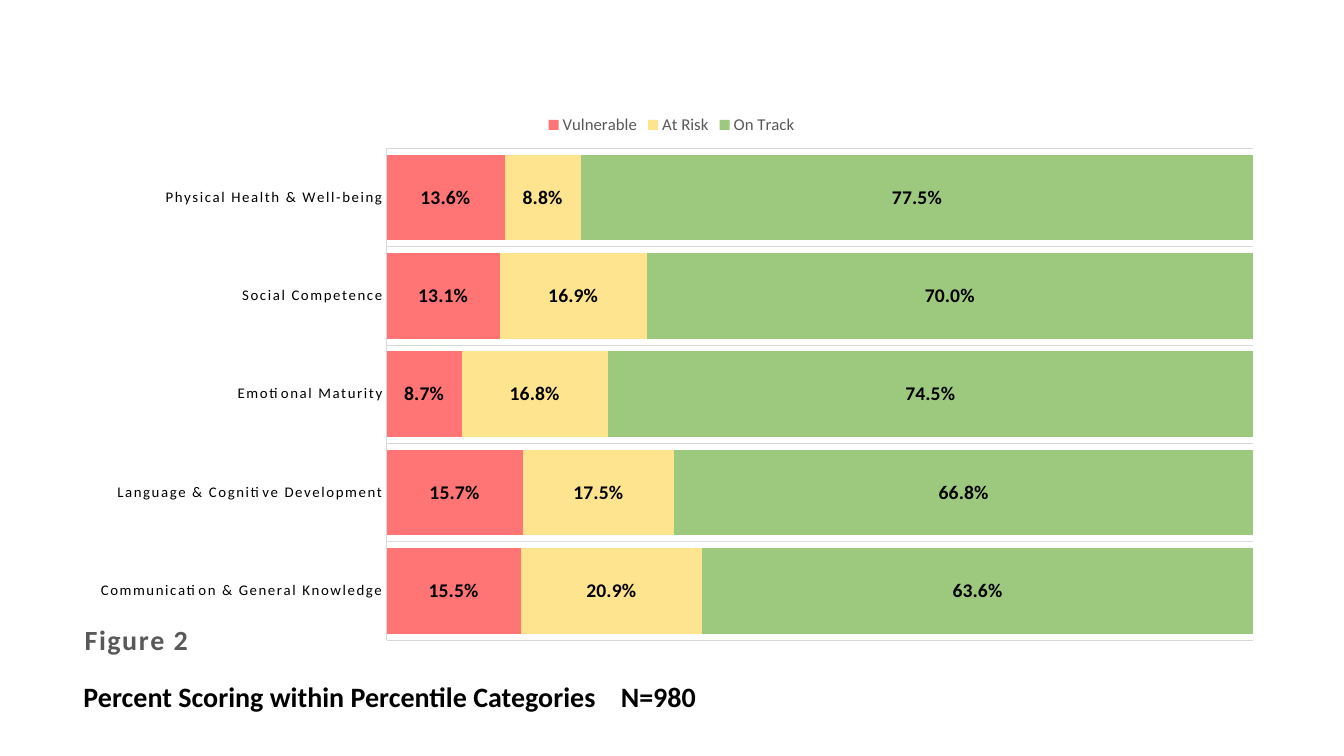
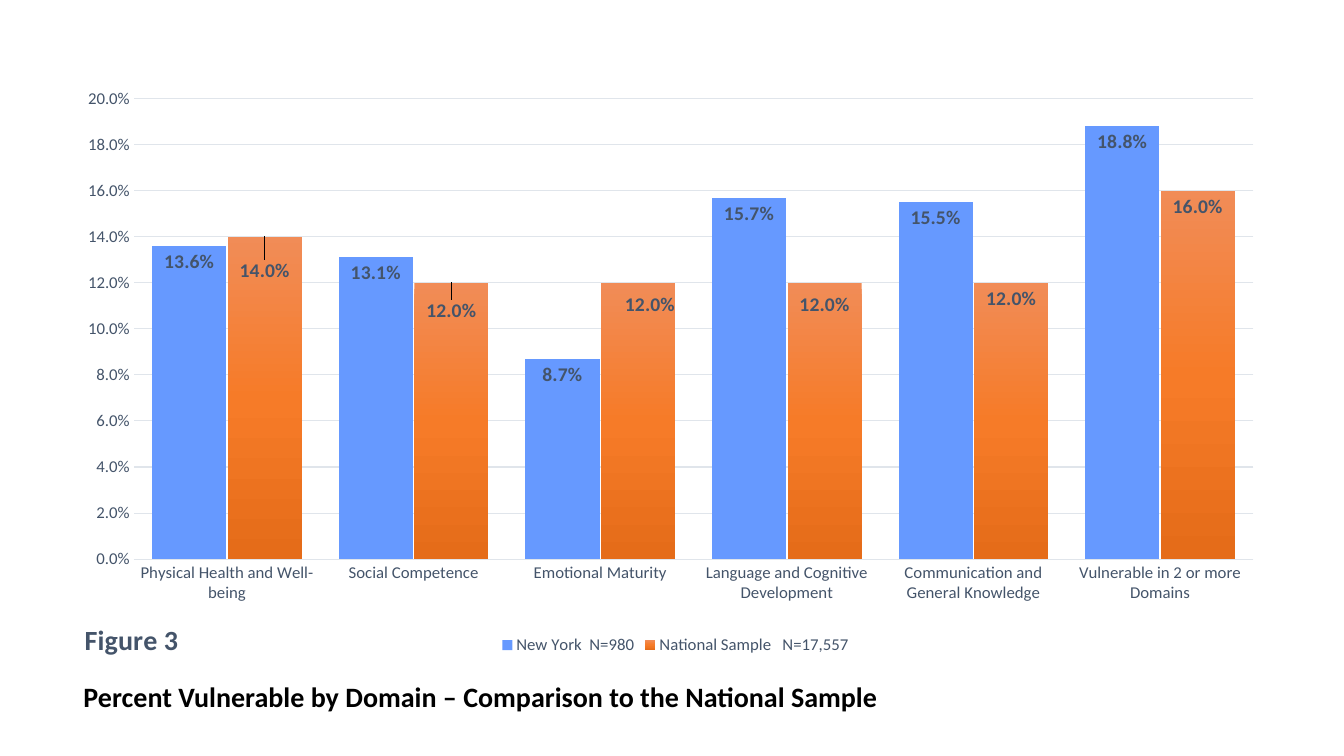
"""Build two chart slides on child development domains."""
from copy import deepcopy

from pptx import Presentation
from pptx.chart.data import CategoryChartData
from pptx.dml.color import RGBColor
from pptx.enum.chart import XL_CHART_TYPE, XL_LABEL_POSITION, XL_LEGEND_POSITION, XL_TICK_MARK
from pptx.enum.text import MSO_ANCHOR
from pptx.oxml import parse_xml
from pptx.oxml.ns import nsdecls, qn
from pptx.util import Inches, Pt

STACKED, CLUSTERED = XL_CHART_TYPE.BAR_STACKED_100, XL_CHART_TYPE.COLUMN_CLUSTERED
CENTER, INSIDE_END = XL_LABEL_POSITION.CENTER, XL_LABEL_POSITION.INSIDE_END
TOP, BOTTOM = XL_LEGEND_POSITION.TOP, XL_LEGEND_POSITION.BOTTOM
NO_TICK = XL_TICK_MARK.NONE
MIDDLE = MSO_ANCHOR.MIDDLE

FONT = "Calibri"
PERCENT = "0.0%"
COLORS = {
    "black": "000000", "gray": "595959", "slate": "44546A",
    "gray_line": "D9D9D9", "slate_line": "E0E5EB",
    "vulnerable": "FF7575", "at_risk": "FFE48F", "on_track": "9CC97D",
    "new_york": "6699FF",
    "national_top": "F18C57", "national_mid": "F67B28", "national_base": "E56C19",
}
NATIONAL_STOPS = [(0, "national_top"), (0.5, "national_mid"), (1, "national_base")]
LEFT, WIDTH = Inches(0.73), Inches(11.94)

FIGURES = [
    {
        "heading": "Percent Scoring within Percentile Categories\u00a0\u00a0\u00a0 N=980".replace("\u00a0", " "),
        "label": "Figure 2", "type": STACKED, "gap": 15, "overlap": 100,
        "categories": ["Communication & General Knowledge", "Language & Cognitive Development",
                       "Emotional Maturity", "Social Competence", "Physical Health & Well-being"],
        "series": [
            ("Vulnerable", [0.155, 0.157, 0.087, 0.131, 0.136], "vulnerable"),
            ("At Risk", [0.209, 0.175, 0.168, 0.169, 0.088], "at_risk"),
            ("On Track", [0.636, 0.668, 0.745, 0.7, 0.775], "on_track"),
        ],
        "text": "gray", "line": "gray_line", "axis_text": "black", "axis_size": 10.6,
        "value_text": "black", "value_position": CENTER, "legend": TOP,
        "plot": (0.26, 0.18, 0.72, 0.79), "legend_at": (0.39, 0.12),
        "label_spacing": "100", "axis_spacing": "120", "scale": (1, 0.1), "nudges": [],
    },
    {
        "heading": "Percent Vulnerable by Domain – Comparison to the National Sample",
        "label": "Figure 3", "type": CLUSTERED, "gap": 50, "overlap": -2,
        "categories": ["Physical Health and Well-being", "Social Competence", "Emotional Maturity",
                       "Language and Cognitive Development", "Communication and General Knowledge",
                       "Vulnerable in 2 or more Domains"],
        "series": [
            ("New York  N=980", [0.136, 0.131, 0.087, 0.157, 0.155, 0.188], "new_york"),
            ("National Sample   N=17,557", [0.14, 0.12, 0.12, 0.12, 0.12, 0.16], NATIONAL_STOPS),
        ],
        "text": "slate", "line": "slate_line", "axis_text": "slate", "axis_size": 12,
        "value_text": "slate", "value_position": INSIDE_END, "legend": BOTTOM,
        "plot": (0.05, 0.1, 0.93, 0.74), "legend_at": None,
        "label_spacing": "0", "axis_spacing": "0", "scale": (0.2, 0.02),
        "nudges": [(0, 0.03), (0, 0.02), (0.01, 0.01), (0, 0.01)],
    },
]


def style(font, size, color, bold=False):
    font.name, font.size, font.bold = FONT, Pt(size), bold
    font.color.rgb = RGBColor.from_string(COLORS[color])


def place(part, index, box, edge=True):
    for old in part.findall(qn("c:layout")):
        part.remove(old)
    target = '<c:layoutTarget val="inner"/>' if len(box) == 4 else ""
    modes = '<c:xMode val="edge"/><c:yMode val="edge"/>' if edge else ""
    sizes = "".join(f'<c:{side} val="{size}"/>' for side, size in zip("xywh", box))
    part.insert(index, parse_xml(
        f'<c:layout {nsdecls("c")}><c:manualLayout>{target}{modes}{sizes}'
        "</c:manualLayout></c:layout>"))


prs = Presentation()
prs.slide_width, prs.slide_height = Inches(13.33), Inches(7.5)

for figure in FIGURES:
    slide = prs.slides.add_slide(prs.slide_layouts[6])

    heading = slide.shapes.add_textbox(LEFT, Inches(6.61), WIDTH, Inches(0.63)).text_frame
    heading.word_wrap = True
    heading.vertical_anchor = MIDDLE
    heading.text = figure["heading"]
    heading.paragraphs[0].line_spacing = 0.9
    style(heading.paragraphs[0].font, 20, "black", True)

    data = CategoryChartData(number_format=PERCENT)
    data.categories = figure["categories"]
    for name, values, _ in figure["series"]:
        data.add_series(name, values)
    chart = slide.shapes.add_chart(
        figure["type"], LEFT, Inches(0.36), WIDTH, Inches(6.25), data).chart
    style(chart.font, 10, "black")

    chart.has_title = True
    label = chart.chart_title.text_frame
    label.text = figure["label"]
    style(label.paragraphs[0].font, 20, figure["text"], True)
    label.paragraphs[0].font._rPr.set("spc", figure["label_spacing"])
    title_part = chart.chart_title._element
    place(title_part, 1, (0.005, 0.93))
    title_part.find(qn("c:overlay")).set("val", "1")
    place(chart.plots[0]._element.getparent(), 0, figure["plot"])

    chart.has_legend = True
    chart.legend.position = figure["legend"]
    chart.legend.include_in_layout = False
    style(chart.legend.font, 12, figure["text"])
    if figure["legend_at"]:
        place(chart.legend._element, 1, figure["legend_at"])

    line_color = RGBColor.from_string(COLORS[figure["line"]])
    domains, shares = chart.category_axis, chart.value_axis
    for axis in (domains, shares):
        axis.major_tick_mark = axis.minor_tick_mark = NO_TICK
        style(axis.tick_labels.font, figure["axis_size"], figure["axis_text"])
    domains.tick_labels.font._rPr.set("spc", figure["axis_spacing"])
    domains.format.line.color.rgb = line_color
    domains.format.line.width = Pt(0.75)
    shares.format.line.fill.background()
    shares.tick_labels.number_format = PERCENT
    shares.tick_labels.number_format_is_linked = False
    shares.minimum_scale = 0
    shares.maximum_scale, shares.major_unit = figure["scale"]
    stacked = figure["type"] == STACKED
    shares.visible = not stacked
    domains.has_major_gridlines, shares.has_major_gridlines = stacked, not stacked
    gridlines = (domains if stacked else shares).major_gridlines.format.line
    gridlines.color.rgb = line_color
    gridlines.width = Pt(0.75)

    plot = chart.plots[0]
    plot.gap_width, plot.overlap = figure["gap"], figure["overlap"]
    plot.vary_by_categories = False
    for series, (_, _, color) in zip(plot.series, figure["series"]):
        series.invert_if_negative = False
        fill = series.format.fill
        if isinstance(color, str):
            fill.solid()
            fill.fore_color.rgb = RGBColor.from_string(COLORS[color])
        else:
            fill.gradient()
            fill.gradient_angle = 270
            stops = series._element.find(".//" + qn("a:gsLst"))
            stops.insert(1, deepcopy(stops[0]))
            for stop, (position, shade) in zip(fill.gradient_stops, color):
                stop.position = position
                stop.color.rgb = RGBColor.from_string(COLORS[shade])
        values = series.data_labels
        values.show_value = True
        values.number_format, values.number_format_is_linked = PERCENT, False
        values.position = figure["value_position"]
        style(values.font, 14, figure["value_text"], True)

    for index, nudge in enumerate(figure["nudges"]):
        value = plot.series[1].points[index].data_label
        style(value.font, 14, figure["value_text"], True)
        value.position = figure["value_position"]
        place(plot.series[1].data_labels._element.findall(qn("c:dLbl"))[index], 1, nudge, False)

prs.save("out.pptx")
